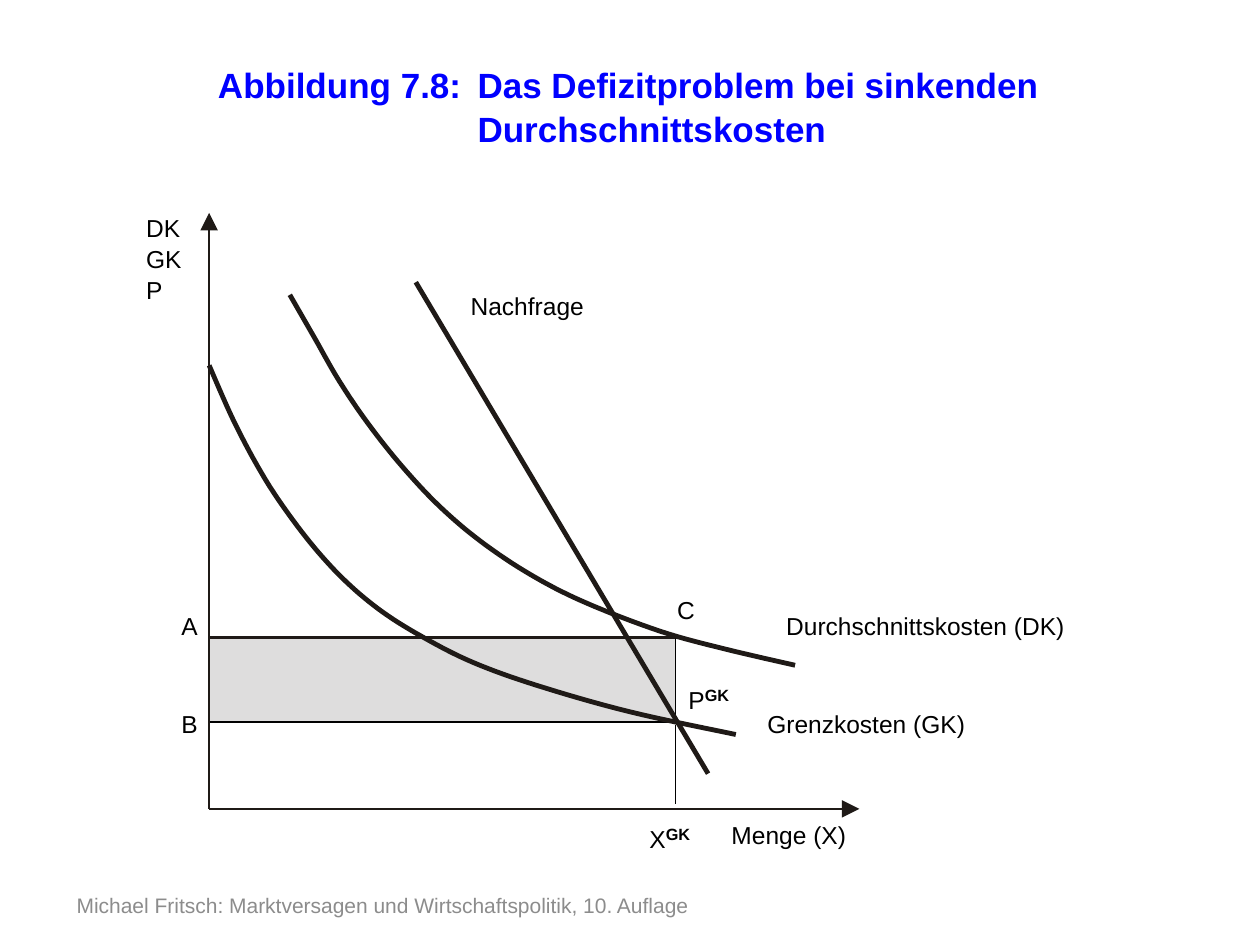
from dataclasses import dataclass

from lxml.etree import SubElement
from pptx import Presentation
from pptx.dml.color import RGBColor
from pptx.enum.shapes import MSO_CONNECTOR, MSO_SHAPE
from pptx.enum.text import MSO_ANCHOR, PP_ALIGN
from pptx.oxml.ns import qn
from pptx.util import Inches, Pt


@dataclass(frozen=True)
class Theme:
    font: str = "Arial"
    blue: RGBColor = RGBColor(0x00, 0x00, 0xFF)
    black: RGBColor = RGBColor(0x00, 0x00, 0x00)
    ink: RGBColor = RGBColor(0x1F, 0x1A, 0x17)
    area: RGBColor = RGBColor(0xDE, 0xDD, 0xDD)
    grey: RGBColor = RGBColor(0x8C, 0x8C, 0x8C)
    title: int = 20
    label: int = 14
    superscript: int = 16
    footer: int = 12
    thin: float = 0.75
    axis: float = 1.5
    curve: float = 2.75
    spacing: float = 1.05


T = Theme()


def style(r, size, color, bold=False):
    formats = {"name": T.font, "size": Pt(size), "bold": bold}
    for name, value in formats.items():
        setattr(r.font, name, value)
    r.font.color.rgb = color


def set_frame(tf, anchor=MSO_ANCHOR.TOP, side=0.1, top=0.05):
    formats = {
        "word_wrap": True, "vertical_anchor": anchor,
        "margin_left": Inches(side), "margin_right": Inches(side),
        "margin_top": Inches(top), "margin_bottom": Inches(0.05),
    }
    for name, value in formats.items():
        setattr(tf, name, value)


def add_title(s, left, top, width, height):
    sp = s.shapes.title
    sp.left, sp.top, sp.width, sp.height = map(Inches, (left, top, width, height))
    set_frame(sp.text_frame)
    p = sp.text_frame.paragraphs[0]
    p.alignment, p.line_spacing = PP_ALIGN.LEFT, T.spacing
    # Hanging indent: the tab and the second line share one edge
    indent = Inches(2.06)
    pPr = p._p.get_or_add_pPr()
    pPr.set("marL", str(indent))
    pPr.set("indent", str(-indent))
    r = p.add_run()
    r.text = "Abbildung 7.8:\tDas Defizitproblem bei sinkenden Durchschnittskosten"
    style(r, T.title, T.blue, bold=True)


def add_footer(s, left, top, width, height):
    sp = s.shapes.add_textbox(*map(Inches, (left, top, width, height)))
    set_frame(sp.text_frame, MSO_ANCHOR.MIDDLE)
    r = sp.text_frame.paragraphs[0].add_run()
    r.text = "Michael Fritsch: Marktversagen und Wirtschaftspolitik, 10. Auflage"
    style(r, T.footer, T.grey)


def add_line(s, start, end, color, width, arrow=False):
    sp = s.shapes.add_connector(MSO_CONNECTOR.STRAIGHT, *start, *end)
    sp.line.color.rgb = color
    sp.line.width = Pt(width)
    if arrow:
        SubElement(sp.line._get_or_add_ln(), qn("a:tailEnd"),
                   type="triangle", w="lg", len="lg")
    SubElement(sp._element.spPr, qn("a:effectLst"))


def smooth(knots, steps=8):
    """Points of a Catmull-Rom curve through the knots."""
    padded = [knots[0], *knots, knots[-1]]
    points = [knots[0]]
    for a, b, c, d in zip(padded, padded[1:], padded[2:], padded[3:]):
        for t in (i / steps for i in range(1, steps + 1)):
            points.append(tuple(
                0.5 * (2 * q + (v - p) * t + (2 * p - 5 * q + 4 * v - w) * t**2
                       + (3 * q - p - 3 * v + w) * t**3)
                for p, q, v, w in zip(a, b, c, d)))
    return points


def add_curve(s, points):
    builder = s.shapes.build_freeform(*points[0], scale=1.0)
    builder.add_line_segments(points[1:], close=False)
    sp = builder.convert_to_shape()
    sp.shadow.inherit = False
    sp.fill.background()
    sp.line.color.rgb = T.ink
    sp.line.width = Pt(T.curve)


def add_label(s, corner, width, text, power="", height=0.44, align=PP_ALIGN.CENTER):
    sp = s.shapes.add_textbox(*corner, Inches(width), Inches(height))
    tf = sp.text_frame
    set_frame(tf, side=0.08, top=0.06)
    for i, line in enumerate(text.split("\n")):
        p = tf.add_paragraph() if i else tf.paragraphs[0]
        p.alignment, p.line_spacing = align, T.spacing
        r = p.add_run()
        r.text = line
        style(r, T.label, T.black)
    if power:
        r = p.add_run()
        r.text = power
        style(r, T.superscript, T.black, bold=True)
        r.font._element.set("baseline", "30000")


def add_diagram(s, left, top):
    def at(x, y):
        return Inches(left + x), Inches(top + y)

    axis_x, axis_y = 0.66, 4.82
    quantity, price_a, price_b = 4.36, 3.46, 4.13

    # Deficit area between the prices A and B
    area = s.shapes.add_shape(MSO_SHAPE.RECTANGLE, *at(axis_x, price_a),
                              Inches(quantity - axis_x), Inches(price_b - price_a))
    area.shadow.inherit = False
    area.fill.solid()
    area.fill.fore_color.rgb = T.area
    area.line.color.rgb = T.black
    area.line.width = Pt(T.thin)
    add_line(s, at(axis_x, price_a), at(quantity, price_a), T.ink, T.axis)
    add_line(s, at(quantity, 4.15), at(quantity, 4.78), T.black, T.thin)

    # Marginal cost, average cost and demand
    marginal = [(0.66, 1.30), (0.85, 1.73), (1.05, 2.11), (1.24, 2.41),
                (1.49, 2.74), (1.75, 3.02), (2.04, 3.26), (2.38, 3.47),
                (2.76, 3.66), (3.26, 3.84), (4.00, 4.05), (4.84, 4.23)]
    average = [(1.30, 0.74), (1.49, 1.07), (1.69, 1.42), (1.92, 1.76),
               (2.19, 2.10), (2.49, 2.42), (2.82, 2.70), (3.21, 2.96),
               (3.64, 3.18), (4.24, 3.41), (4.75, 3.55), (5.31, 3.68)]
    for knots in (marginal, average):
        add_curve(s, [at(x, y) for x, y in smooth(knots)])
    add_line(s, at(2.30, 0.64), at(4.62, 4.54), T.ink, T.curve)

    # Axes
    for end in ((5.82, axis_y), (axis_x, 0.09)):
        add_line(s, at(axis_x, axis_y), at(*end), T.ink, T.axis, arrow=True)

    # Labels: left, top, width, text, superscript
    add_label(s, at(0.08, 0.02), 0.66, "DK\nGK\nP", height=1.06, align=PP_ALIGN.LEFT)
    for x, y, width, text, power in (
        (4.79, 3.96, 2.17, "Grenzkosten (GK)", ""),
        (4.84, 3.18, 3.01, "Durchschnittskosten (DK)", ""),
        (2.43, 0.64, 1.51, "Nachfrage", ""),
        (0.27, 3.18, 0.47, "A", ""),
        (0.27, 3.96, 0.47, "B", ""),
        (4.21, 3.05, 0.47, "C", ""),
        (4.25, 3.74, 0.75, "P", "GK"),
        (4.60, 4.84, 1.32, "Menge (X)", ""),
        (3.94, 4.84, 0.75, "X", "GK"),
    ):
        add_label(s, at(x, y), width, text, power)


def main():
    prs = Presentation()
    prs.slide_width, prs.slide_height = Inches(10), Inches(7.5)
    s = prs.slides.add_slide(prs.slide_layouts[5])
    add_title(s, 1.63, 0.44, 6.77, 0.77)
    add_diagram(s, 1, 1.6)
    add_footer(s, 0.51, 6.98, 5.43, 0.4)
    prs.save("out.pptx")


if __name__ == "__main__":
    main()
